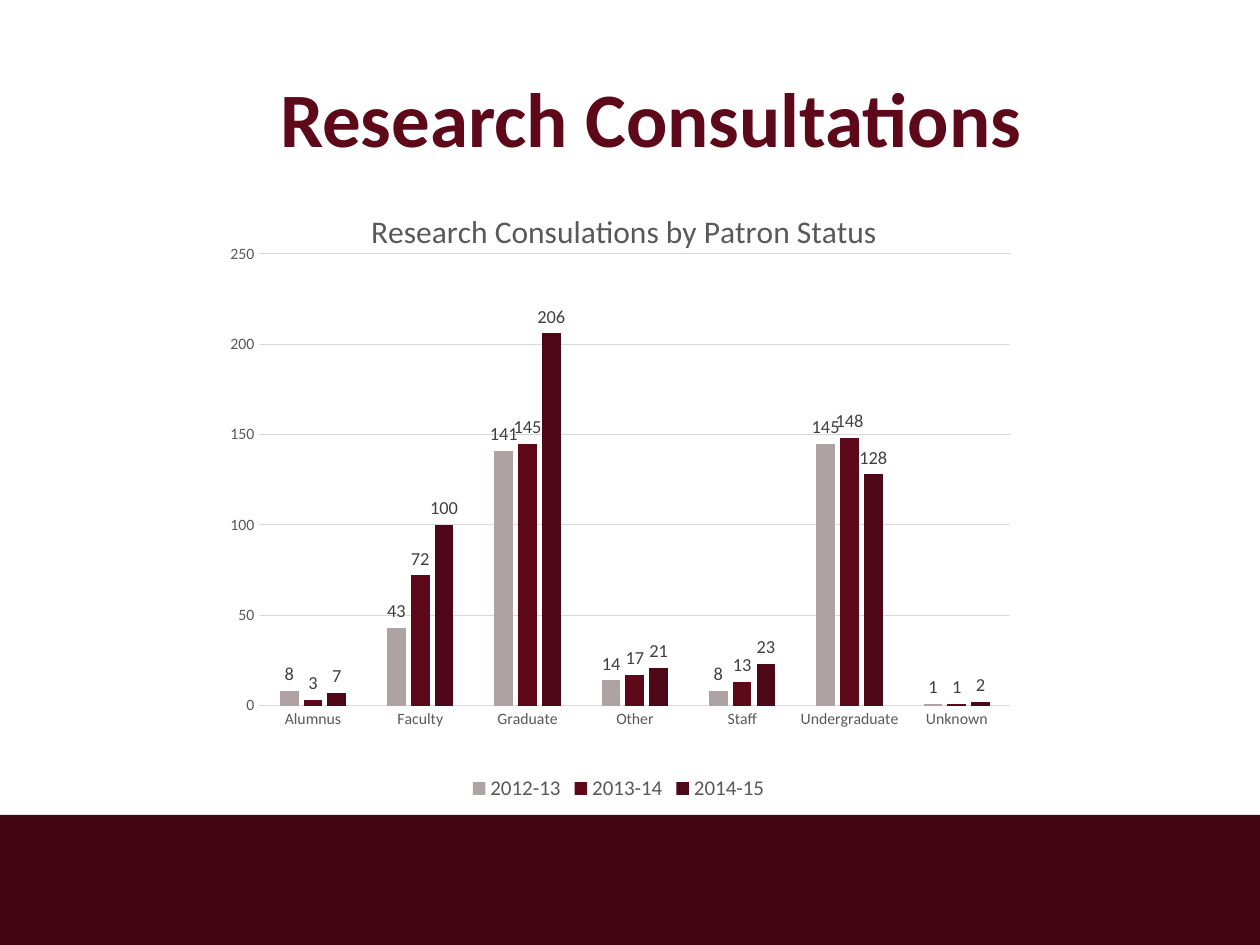
from dataclasses import dataclass

from lxml import etree
from pptx import Presentation
from pptx.chart.data import CategoryChartData
from pptx.dml.color import RGBColor
from pptx.enum.chart import XL_CHART_TYPE, XL_LABEL_POSITION, XL_LEGEND_POSITION, XL_TICK_MARK
from pptx.enum.shapes import MSO_SHAPE
from pptx.enum.text import MSO_ANCHOR, PP_ALIGN
from pptx.oxml.ns import qn
from pptx.util import Cm, Pt

COLUMNS = XL_CHART_TYPE.COLUMN_CLUSTERED
LABELS_ABOVE = XL_LABEL_POSITION.OUTSIDE_END
LEGEND_BELOW = XL_LEGEND_POSITION.BOTTOM
NO_TICKS = XL_TICK_MARK.NONE
RECTANGLE = MSO_SHAPE.RECTANGLE
MIDDLE = MSO_ANCHOR.MIDDLE
CENTER = PP_ALIGN.CENTER
TITLE_ONLY = 5


@dataclass(frozen=True)
class Theme:
    font: str = "Calibri"
    band: str = "410611"
    heading: str = "5E091A"
    text: str = "595959"
    label: str = "404040"
    grid: str = "D9D9D9"
    series: tuple = ("AEA2A2", "5E091A", "4E0716")
    heading_size: float = 44
    chart_title_size: float = 18
    legend_size: float = 12
    label_size: float = 10.5
    chart_size: float = 10
    axis_size: float = 9


THEME = Theme()

STATUSES = ["Alumnus", "Faculty", "Graduate", "Other", "Staff", "Undergraduate", "Unknown"]
CONSULTATIONS = {
    "2012-13": (8, 43, 141, 14, 8, 145, 1),
    "2013-14": (3, 72, 145, 17, 13, 148, 1),
    "2014-15": (7, 100, 206, 21, 23, 128, 2),
}


def style_font(font, size, color, bold=False):
    font.name = THEME.font
    font.size = Pt(size)
    font.bold = bold
    font.color.rgb = RGBColor.from_string(color)


def style_line(line, color):
    line.color.rgb = RGBColor.from_string(color)
    line.width = Pt(0.75)


def add_band(slide, left, top, width, height):
    band = slide.shapes.add_shape(RECTANGLE, left, top, width, height)
    band.shadow.inherit = False
    band.fill.solid()
    band.fill.fore_color.rgb = RGBColor.from_string(THEME.band)
    band.line.fill.background()


def set_title(slide, text, left, top, width, height):
    title = slide.shapes.title
    title.left, title.top, title.width, title.height = left, top, width, height
    frame = title.text_frame
    frame.word_wrap = True
    frame.vertical_anchor = MIDDLE
    paragraph = frame.paragraphs[0]
    paragraph.alignment = CENTER
    run = paragraph.add_run()
    run.text = text
    style_font(run.font, THEME.heading_size, THEME.heading, bold=True)


def set_layout(parent, index, **settings):
    layout = parent.find(qn("c:layout"))
    if layout is not None:
        parent.remove(layout)
    layout = etree.Element(qn("c:layout"))
    manual = etree.SubElement(layout, qn("c:manualLayout"))
    for name, value in settings.items():
        etree.SubElement(manual, qn(f"c:{name}")).set("val", str(value))
    parent.insert(index, layout)


def style_axis(axis):
    axis.major_tick_mark = NO_TICKS
    axis.minor_tick_mark = NO_TICKS
    style_font(axis.tick_labels.font, THEME.axis_size, THEME.text)


def style_axes(chart):
    style_axis(chart.category_axis)
    style_line(chart.category_axis.format.line, THEME.grid)
    value_axis = chart.value_axis
    style_axis(value_axis)
    value_axis.minimum_scale = 0
    value_axis.maximum_scale = 250
    value_axis.major_unit = 50
    value_axis.format.line.fill.background()
    value_axis.has_major_gridlines = True
    style_line(value_axis.major_gridlines.format.line, THEME.grid)


def style_series(series, color):
    series.format.fill.solid()
    series.format.fill.fore_color.rgb = RGBColor.from_string(color)
    series.invert_if_negative = False
    labels = series.data_labels
    labels.show_value = True
    labels.position = LABELS_ABOVE
    style_font(labels.font, THEME.label_size, THEME.label)


def set_chart_title(chart, text):
    chart.has_title = True
    title = chart.chart_title
    run = title.text_frame.paragraphs[0].add_run()
    run.text = text
    style_font(run.font, THEME.chart_title_size, THEME.text)
    set_layout(title.element, 1, xMode="edge", yMode="edge", x=0.19, y=0.04)


def add_column_chart(slide, title, left, top, width, height):
    data = CategoryChartData()
    data.categories = STATUSES
    for name, values in CONSULTATIONS.items():
        data.add_series(name, values)
    chart = slide.shapes.add_chart(COLUMNS, left, top, width, height, data).chart
    style_font(chart.font, THEME.chart_size, "000000")
    set_chart_title(chart, title)
    style_axes(chart)

    plot = chart.plots[0]
    plot.vary_by_categories = False
    plot.gap_width = 219
    plot.overlap = -27
    for series, color in zip(plot.series, THEME.series):
        style_series(series, color)

    chart.has_legend = True
    chart.legend.position = LEGEND_BELOW
    chart.legend.include_in_layout = False
    style_font(chart.legend.font, THEME.legend_size, THEME.text)

    plot_area = chart.category_axis.format.line and chart.element.find(f".//{qn('c:plotArea')}")
    set_layout(plot_area, 0, layoutTarget="inner", xMode="edge", yMode="edge",
               x=0.06, y=0.12, w=0.92, h=0.72)


def main():
    presentation = Presentation()
    presentation.slide_width = Cm(25.4)
    presentation.slide_height = Cm(19.05)
    slide = presentation.slides.add_slide(presentation.slide_layouts[TITLE_ONLY])
    add_band(slide, Cm(0), Cm(16.43), Cm(25.4), Cm(2.62))
    set_title(slide, "Research Consultations", Cm(4.9), Cm(0.76), Cm(16.46), Cm(3.18))
    add_column_chart(slide, "Research Consulations by Patron Status",
                     Cm(4.24), Cm(3.6), Cm(16.46), Cm(12.65))
    presentation.save("out.pptx")


if __name__ == "__main__":
    main()
